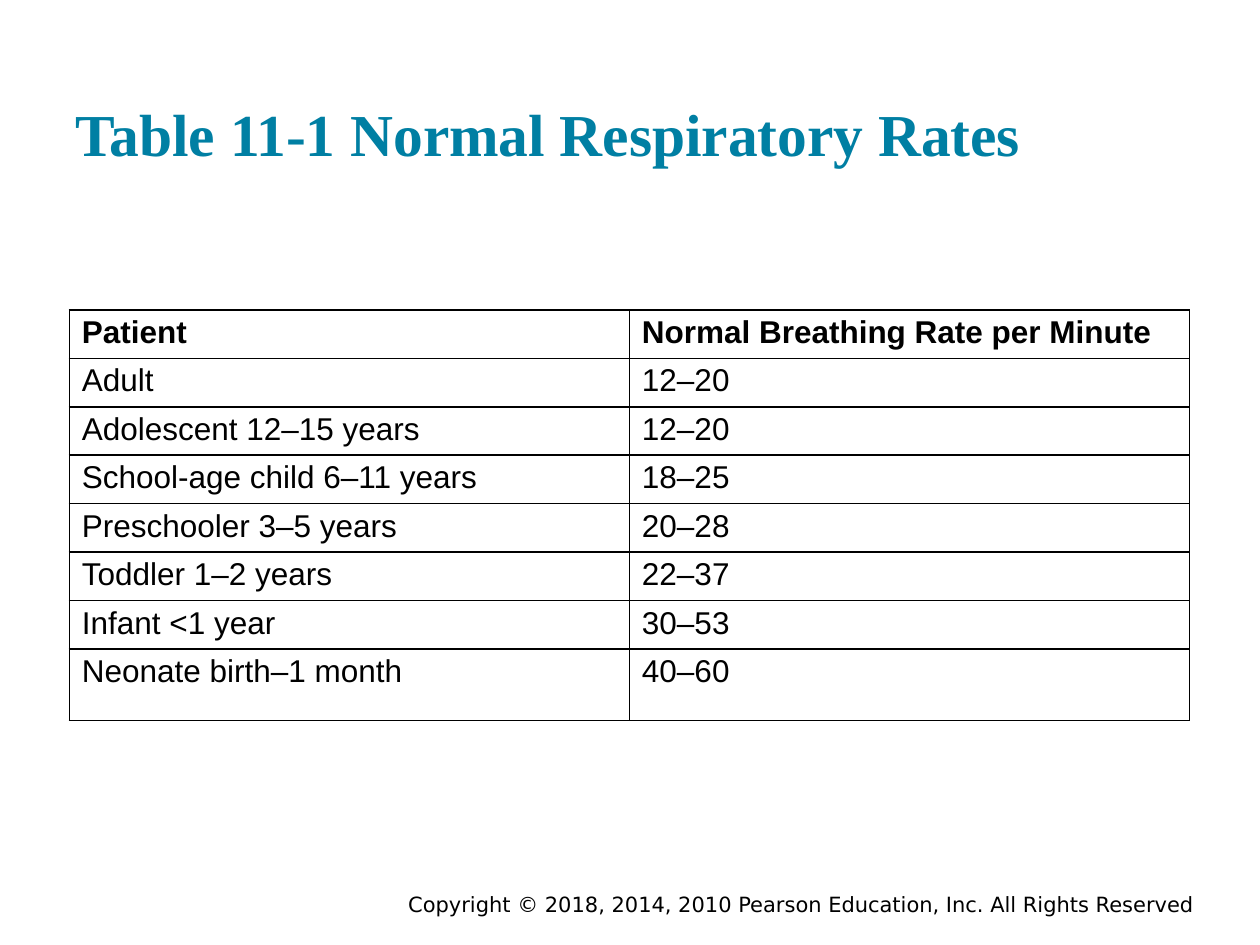
"""Build a slide with a table of normal respiratory rates by patient age."""
from dataclasses import dataclass
from typing import NamedTuple

from lxml.etree import SubElement
from pptx import Presentation
from pptx.dml.color import RGBColor
from pptx.enum.text import MSO_ANCHOR, MSO_AUTO_SIZE, PP_ALIGN
from pptx.oxml.ns import qn
from pptx.util import Inches, Pt


@dataclass(frozen=True)
class Theme:
    ink: str = "000000"
    accent: str = "007FA3"
    paper: str = "FFFFFF"
    title_font: str = "Times New Roman"
    body_font: str = "Arial"
    footer_font: str = "DejaVu Sans"
    title_size: int = 34
    body_size: int = 18
    footer_size: int = 12
    border_width: int = 1


class Area(NamedTuple):
    left: float
    top: float
    width: float
    height: float


class Rate(NamedTuple):
    patient: str
    breaths: str


THEME = Theme()
SLIDE_WIDTH, SLIDE_HEIGHT = Inches(10), Inches(7.5)
TITLE_AREA = Area(0.5 / 10, 0.24 / 7.5, 9 / 10, 1.2 / 7.5)
TABLE_AREA = Area(0.55 / 10, 2.46 / 7.5, 8.89 / 10, 3.26 / 7.5)
FOOTER_AREA = Area(2.92 / 10, 7.05 / 7.5, 6.66 / 10, 0.25 / 7.5)
LAST_ROW_SHARE = 0.57 / 3.26

TITLE = "Table 11-1 Normal Respiratory Rates"
FOOTER = "Copyright © 2018, 2014, 2010 Pearson Education, Inc. All Rights Reserved"
RATES = [
    Rate("Patient", "Normal Breathing Rate per Minute"),
    Rate("Adult", "12–20"),
    Rate("Adolescent 12–15 years", "12–20"),
    Rate("School-age child 6–11 years", "18–25"),
    Rate("Preschooler 3–5 years", "20–28"),
    Rate("Toddler 1–2 years", "22–37"),
    Rate("Infant <1 year", "30–53"),
    Rate("Neonate birth–1 month", "40–60"),
]


def place(area: Area) -> tuple[int, int, int, int]:
    """Turn shares of the slide into lengths."""
    return (int(area.left * SLIDE_WIDTH), int(area.top * SLIDE_HEIGHT),
            int(area.width * SLIDE_WIDTH), int(area.height * SLIDE_HEIGHT))


def write(frame, text: str, *, font: str, size: int, color: str = THEME.ink,
          bold: bool = False, align=PP_ALIGN.LEFT) -> None:
    """Write one formatted paragraph into a text frame."""
    para = frame.paragraphs[0]
    para.alignment = align
    span = para.add_run()
    span.text = text
    span.font.name = font
    span.font.size = Pt(size)
    span.font.bold = bold
    span.font.color.rgb = RGBColor.from_string(color)


def set_frame(frame, anchor, margin: float) -> None:
    """Give a text frame its wrapping, anchor and equal margins."""
    frame.word_wrap = True
    frame.auto_size = MSO_AUTO_SIZE.NONE
    frame.vertical_anchor = anchor
    frame.margin_left = frame.margin_right = Inches(0.1)
    frame.margin_top = frame.margin_bottom = Inches(margin)


def draw_borders(cell) -> None:
    """Outline all four sides of a cell and leave it unfilled."""
    properties = cell._tc.get_or_add_tcPr()
    for side in ("a:lnL", "a:lnR", "a:lnT", "a:lnB"):
        line = SubElement(properties, qn(side), w=str(Pt(THEME.border_width)))
        fill = SubElement(line, qn("a:solidFill"))
        SubElement(fill, qn("a:srgbClr"), val=THEME.ink)
    cell.fill.background()


def add_title(page) -> None:
    """Move and format the title placeholder."""
    box = page.shapes.title
    box.left, box.top, box.width, box.height = place(TITLE_AREA)
    set_frame(box.text_frame, MSO_ANCHOR.BOTTOM, 0.1)
    write(box.text_frame, TITLE, font=THEME.title_font, size=THEME.title_size,
          color=THEME.accent, bold=True)


def add_rates(page) -> None:
    """Draw the table of rates, with a taller last row."""
    area = place(TABLE_AREA)
    table = page.shapes.add_table(len(RATES), len(Rate._fields), *area).table
    table.horz_banding = False
    last_height = int(area[3] * LAST_ROW_SHARE)
    row_height = (area[3] - last_height) // (len(RATES) - 1)
    for index, rate in enumerate(RATES):
        is_last = index == len(RATES) - 1
        table.rows[index].height = last_height if is_last else row_height
        for column, text in enumerate(rate):
            cell = table.cell(index, column)
            cell.margin_top = cell.margin_bottom = Inches(0.04)
            draw_borders(cell)
            write(cell.text_frame, text, font=THEME.body_font,
                  size=THEME.body_size, bold=index == 0)


def add_footer(page) -> None:
    """Add the copyright line at the lower right."""
    frame = page.shapes.add_textbox(*place(FOOTER_AREA)).text_frame
    set_frame(frame, MSO_ANCHOR.MIDDLE, 0)
    write(frame, FOOTER, font=THEME.footer_font, size=THEME.footer_size,
          align=PP_ALIGN.RIGHT)


def main() -> None:
    """Build and save the deck."""
    deck = Presentation()
    deck.slide_width, deck.slide_height = SLIDE_WIDTH, SLIDE_HEIGHT
    page = deck.slides.add_slide(deck.slide_layouts[5])
    page.background.fill.solid()
    page.background.fill.fore_color.rgb = RGBColor.from_string(THEME.paper)
    add_footer(page)
    add_title(page)
    add_rates(page)
    deck.save("out.pptx")


if __name__ == "__main__":
    main()
